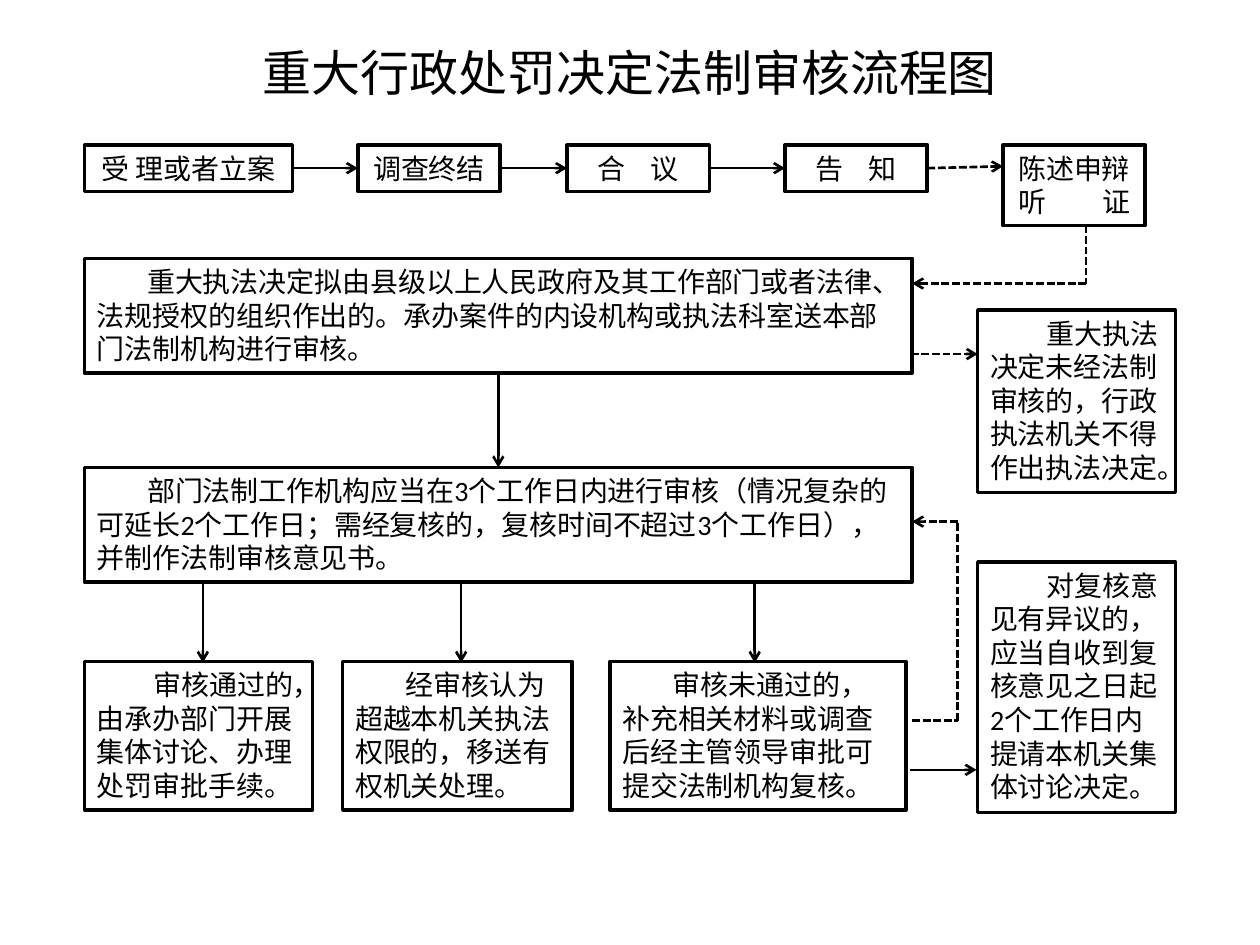
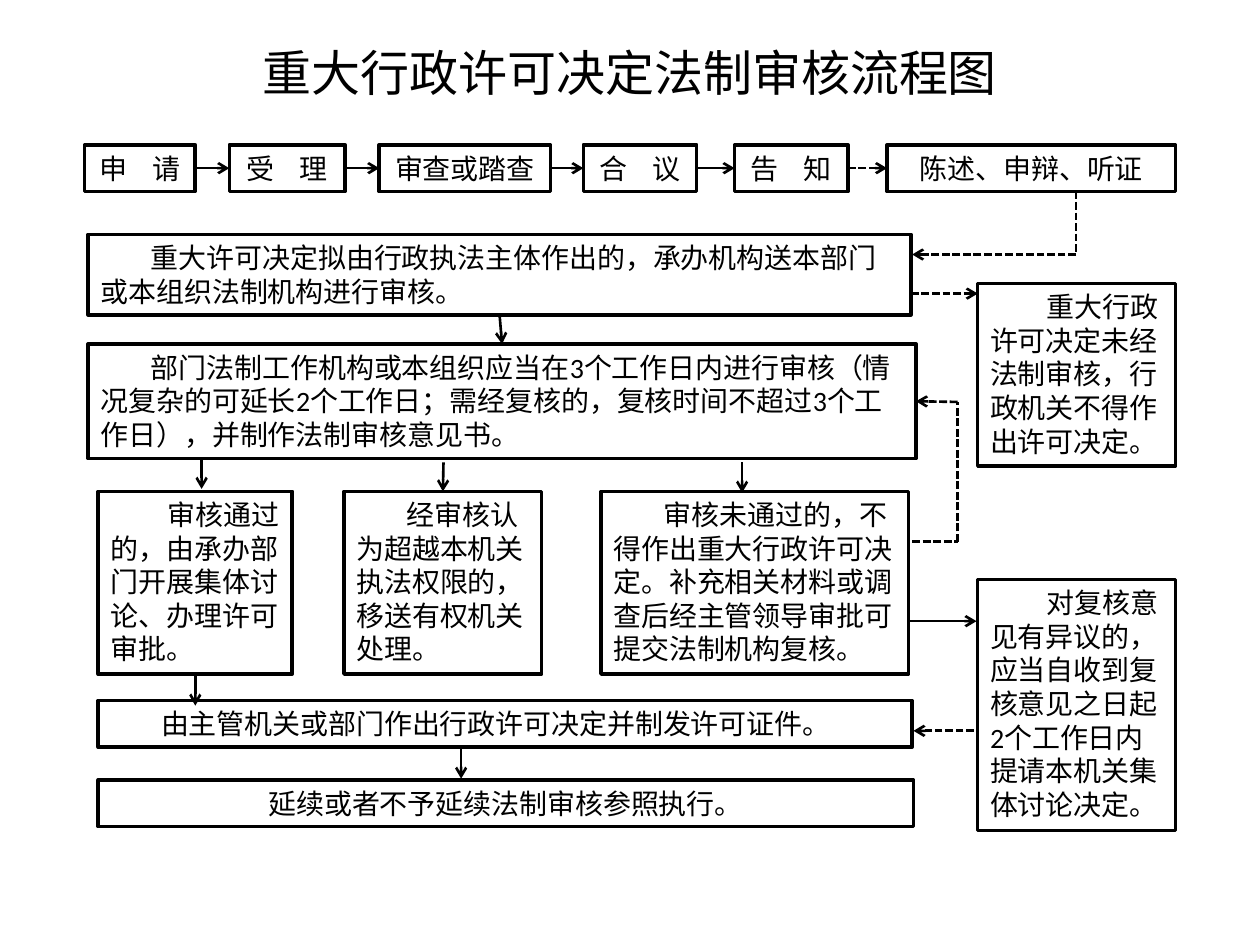
from dataclasses import dataclass
from itertools import pairwise

from lxml import etree
from pptx import Presentation
from pptx import util as u
from pptx.dml.color import RGBColor
from pptx.enum import dml, shapes, text
from pptx.oxml.ns import qn


@dataclass(frozen=True)
class Theme:
    ink: RGBColor = RGBColor(0, 0, 0)
    paper: RGBColor = RGBColor(255, 255, 255)
    title_font: str = "Noto Sans CJK SC"
    body_font: str = "Calibri"
    title_size: int = 28
    body_size: int = 16
    border: float = 2
    stroke: float = 1.5


THEME = Theme()
WIDTH, HEIGHT = u.Inches(10), u.Inches(7.5)
COLUMNS = 100
CELL = WIDTH // COLUMNS
LINE_ROWS, PADDING_ROWS = 2.7, 1
STEP_ROW = 11.5
STEP_MIDDLE = STEP_ROW + (LINE_ROWS + PADDING_ROWS) / 2
SIDE_COLUMN, SIDE_WIDTH = 77.6, 15.7
RETURN_COLUMN = 76
INDENT, WIDE_INDENT = 4, 4.5
TOP, LEFT, BOTTOM, RIGHT = range(4)
OBJECTION = "对复核意见有异议的，应当自收到复核意见之日起2个工作日内提请本机关集体讨论决定。"
OVERREACH = "经审核认为超越本机关执法权限的，移送有权机关处理。"


def cells(*counts):
    return [round(count * CELL) for count in counts]


def add_run(paragraph, words, font, size, gap=0):
    run = paragraph.add_run()
    run.text = words
    run.font.name = font
    run.font.size = u.Pt(size)
    run.font.color.rgb = THEME.ink
    properties = run.font._element
    etree.SubElement(properties, qn("a:ea")).set("typeface", font)
    if gap:
        properties.set("spc", str(round(gap * 100)))


def add_title(slide, words):
    frame = slide.shapes.add_textbox(*cells(0, 2.9, COLUMNS, 5.7)).text_frame
    frame.word_wrap = True
    frame.auto_size = text.MSO_AUTO_SIZE.SHAPE_TO_FIT_TEXT
    frame.paragraphs[0].alignment = text.PP_ALIGN.CENTER
    add_run(frame.paragraphs[0], words, THEME.title_font, THEME.title_size)


def add_box(slide, column, row, width, lines, words, indent=0, gap=14.4):
    height = PADDING_ROWS + LINE_ROWS * lines
    box = slide.shapes.add_shape(
        shapes.MSO_SHAPE.RECTANGLE, *cells(column, row, width, height))
    box.shadow.inherit = False
    box.fill.solid()
    box.fill.fore_color.rgb = THEME.paper
    box.line.color.rgb = THEME.ink
    box.line.width = u.Pt(THEME.border)
    frame = box.text_frame
    frame.word_wrap = True
    frame.auto_size = text.MSO_AUTO_SIZE.SHAPE_TO_FIT_TEXT
    frame.vertical_anchor = text.MSO_ANCHOR.TOP
    paragraph = frame.paragraphs[0]
    paragraph.alignment = text.PP_ALIGN.LEFT if indent else text.PP_ALIGN.CENTER
    if indent:
        properties = paragraph._p.get_or_add_pPr()
        properties.set("marL", "0")
        properties.set("indent", str(cells(indent)[0]))
    for number, line in enumerate(words.split("\n")):
        if number:
            paragraph.add_line_break()
        *spaced, last = line.split("|")
        for part in spaced:
            add_run(paragraph, part, THEME.body_font, THEME.body_size, gap)
        add_run(paragraph, last, THEME.body_font, THEME.body_size)
    return box


def add_segment(slide, start, end, dashed, arrow):
    segment = slide.shapes.add_connector(
        shapes.MSO_CONNECTOR.STRAIGHT, *cells(*start, *end))
    segment.line.color.rgb = THEME.ink
    segment.line.width = u.Pt(THEME.stroke)
    if dashed:
        segment.line.dash_style = dml.MSO_LINE.SQUARE_DOT
    if arrow:
        outline = segment.line._get_or_add_ln()
        etree.SubElement(outline, qn("a:tailEnd")).set("type", "arrow")
    etree.SubElement(segment._element.spPr, qn("a:effectLst"))
    return segment


def add_flow(slide, *stops, dashed=False, source=None, target=None):
    legs = list(pairwise(stops))
    segments = [add_segment(slide, start, end, dashed, end == stops[-1])
                for start, end in legs]
    if source:
        segments[0].begin_connect(*source)
    if target:
        segments[-1].end_connect(*target)


def add_steps(slide, steps, hearing):
    column, width, lines, words = hearing
    boxes = [add_box(slide, left, STEP_ROW, span, 1, label)
             for left, span, label in steps]
    boxes.append(add_box(slide, column, STEP_ROW, width, lines, words, gap=32))
    spans = [step[:2] for step in steps] + [(column, width)]
    for number, ((left, span), (following, _)) in enumerate(pairwise(spans)):
        final = number == len(steps) - 1
        joined = not final or lines == 1
        add_flow(slide, (left + span, STEP_MIDDLE),
                 (following, STEP_MIDDLE if joined else 13.2), dashed=final,
                 source=(boxes[number], RIGHT),
                 target=(boxes[number + 1], LEFT) if joined else None)


def add_outcomes(slide, row, lines, outcomes):
    return [add_box(slide, column, row, width, lines, words, indent)
            for column, width, indent, words in outcomes]


def add_drops(slide, drops):
    for column, start, end in drops:
        add_flow(slide, (column, start), (column, end))


def build_penalty(slide):
    add_title(slide, "重大行政处罚决定法制审核流程图")
    add_steps(slide, [(6.7, 16.5, "受 理或者立案"), (28.4, 11.3, "调查终结"),
                      (45, 11.3, "合|议"), (62.3, 11.3, "告|知")],
              (79.6, 11.3, 2, "陈述申辩\n听|证"))
    submission = add_box(
        slide, 6.7, 20.5, 65.7, 3,
        "重大执法决定拟由县级以上人民政府及其工作部门或者法律、法规授权的组织作出的。"
        "承办案件的内设机构或执法科室送本部门法制机构进行审核。", INDENT)
    review = add_box(
        slide, 6.7, 37.1, 65.7, 3,
        "部门法制工作机构应当在3个工作日内进行审核（情况复杂的可延长2个工作日；"
        "需经复核的，复核时间不超过3个工作日），并制作法制审核意见书。", INDENT)
    add_outcomes(slide, 52.5, 4, [
        (6.7, 18.1, WIDE_INDENT, "审核通过的，由承办部门开展集体讨论、办理处罚审批手续。"),
        (27.2, 18.2, INDENT, OVERREACH),
        (48.4, 23.5, INDENT,
         "审核未通过的，补充相关材料或调查后经主管领导审批可提交法制机构复核。")])
    add_box(slide, SIDE_COLUMN, 44.6, SIDE_WIDTH, 7, OBJECTION, WIDE_INDENT)
    add_box(slide, SIDE_COLUMN, 24.6, SIDE_WIDTH, 5,
            "重大执法决定未经法制审核的，行政执法机关不得作出执法决定。", WIDE_INDENT)
    add_flow(slide, (86.2, 17.9), (86.2, 22.5), (72.4, 22.5), dashed=True)
    add_flow(slide, (72.3, 28.1), (SIDE_COLUMN, 28.1), dashed=True)
    add_flow(slide, (39.5, 29.6), (39.5, 37.1),
             source=(submission, BOTTOM), target=(review, TOP))
    add_drops(slide, [(column, 46.2, 52.6) for column in (16.1, 36.6, 59.9)])
    add_flow(slide, (72.2, 61.1), (77.5, 61.1))
    add_flow(slide, (72.4, 57.2), (RETURN_COLUMN, 57.2), (RETURN_COLUMN, 41.4),
             (72.4, 41.4), dashed=True)


def build_licence(slide):
    add_title(slide, "重大行政许可决定法制审核流程图")
    add_steps(slide, [(6.7, 8.8, "申|请"), (18.2, 9.2, "受|理"),
                      (30.1, 13.6, "审查或踏查"), (46.3, 9, "合|议"),
                      (58.3, 9, "告|知")],
              (70.4, 22.9, 1, "陈述、申辩、听证"))
    submission = add_box(
        slide, 7, 18.6, 65.3, 2,
        "重大许可决定拟由行政执法主体作出的，承办机构送本部门或本组织法制机构进行审核。",
        INDENT)
    review = add_box(
        slide, 7, 27.3, 65.7, 3,
        "部门法制工作机构或本组织应当在3个工作日内进行审核（情况复杂的可延长2个工作日；"
        "需经复核的，复核时间不超过3个工作日），并制作法制审核意见书。", INDENT)
    approved, transferred, _ = add_outcomes(slide, 39, 5, [
        (7.8, 15.4, WIDE_INDENT, "审核通过的，由承办部门开展集体讨论、办理许可审批。"),
        (27.3, 15.7, INDENT, OVERREACH),
        (47.7, 24.4, INDENT,
         "审核未通过的，不得作出重大行政许可决定。"
         "补充相关材料或调查后经主管领导审批可提交法制机构复核。")])
    add_box(slide, SIDE_COLUMN, 46, SIDE_WIDTH, 7, OBJECTION, WIDE_INDENT)
    add_box(slide, SIDE_COLUMN, 22.5, SIDE_WIDTH, 5,
            "重大行政许可决定未经法制审核，行政机关不得作出许可决定。", WIDE_INDENT)
    add_box(slide, 7.8, 55.6, 64.6, 1,
            "由主管机关或部门作出行政许可决定并制发许可证件。", INDENT)
    add_box(slide, 7.8, 61.9, 64.7, 1, "延续或者不予延续法制审核参照执行。")
    add_flow(slide, (85.4, 15.2), (85.4, 20.2), (72.4, 20.2), dashed=True)
    add_flow(slide, (72.3, 23.3), (SIDE_COLUMN, 23.3), dashed=True)
    add_flow(slide, (39.7, 25), (39.8, 27.3),
             source=(submission, BOTTOM), target=(review, TOP))
    add_drops(slide, [(16, 36.4, 38.8), (58.9, 36.7, 39.1), (36.6, 59.3, 61.8)])
    add_flow(slide, (35.2, 36.7), (35.2, 39), target=(transferred, TOP))
    add_flow(slide, (15.5, 53.5), (15.5, 56), source=(approved, BOTTOM))
    add_flow(slide, (72.2, 49.3), (77.5, 49.3))
    add_flow(slide, (72.4, 43), (RETURN_COLUMN, 43), (RETURN_COLUMN, 31.9),
             (72.7, 31.9), dashed=True, target=(review, RIGHT))
    add_flow(slide, (77.3, 58), (72.5, 58), dashed=True)


def main():
    deck = Presentation()
    deck.slide_width, deck.slide_height = WIDTH, HEIGHT
    blank = deck.slide_layouts[6]
    for build in (build_penalty, build_licence):
        build(deck.slides.add_slide(blank))
    deck.save("out.pptx")


if __name__ == "__main__":
    main()
